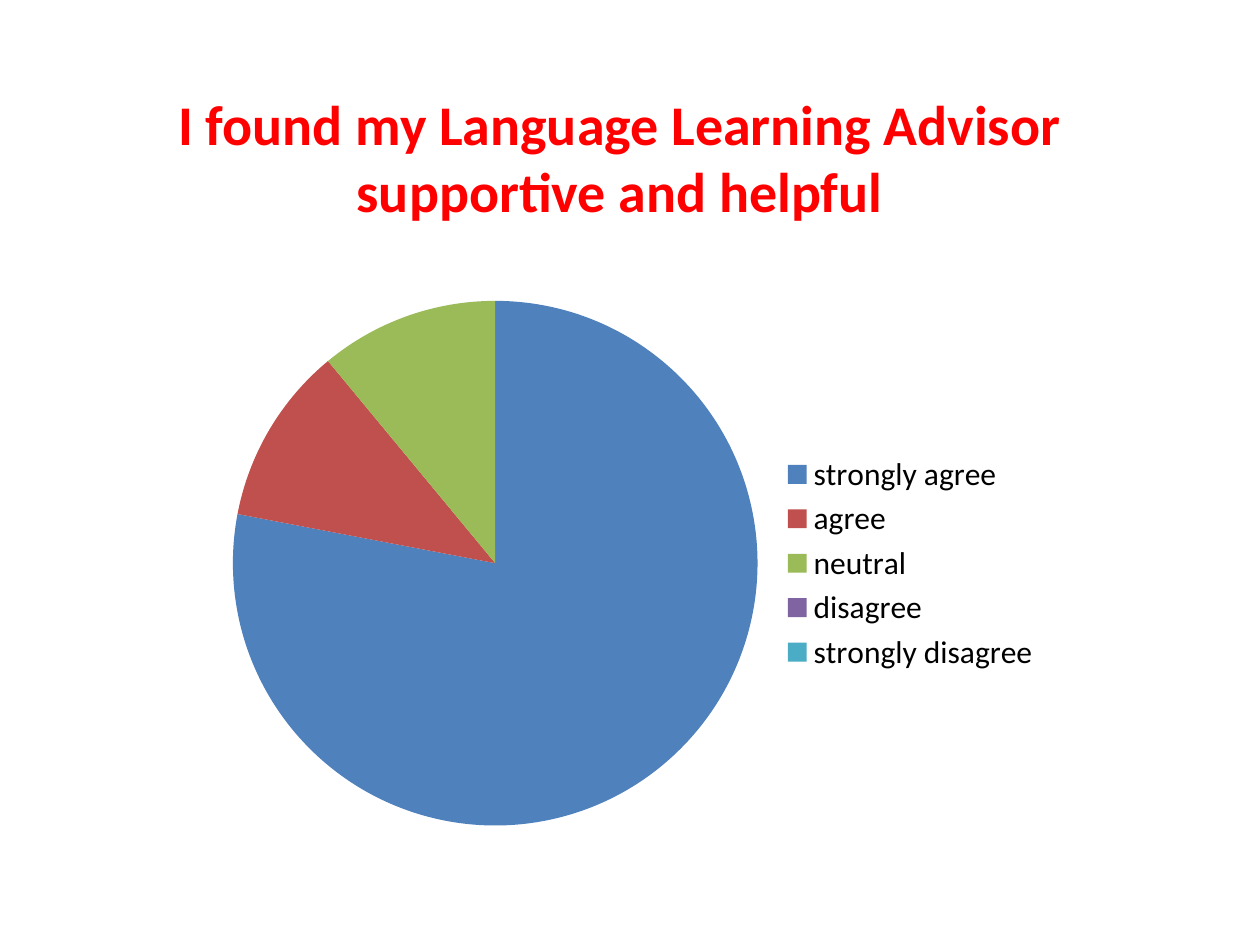
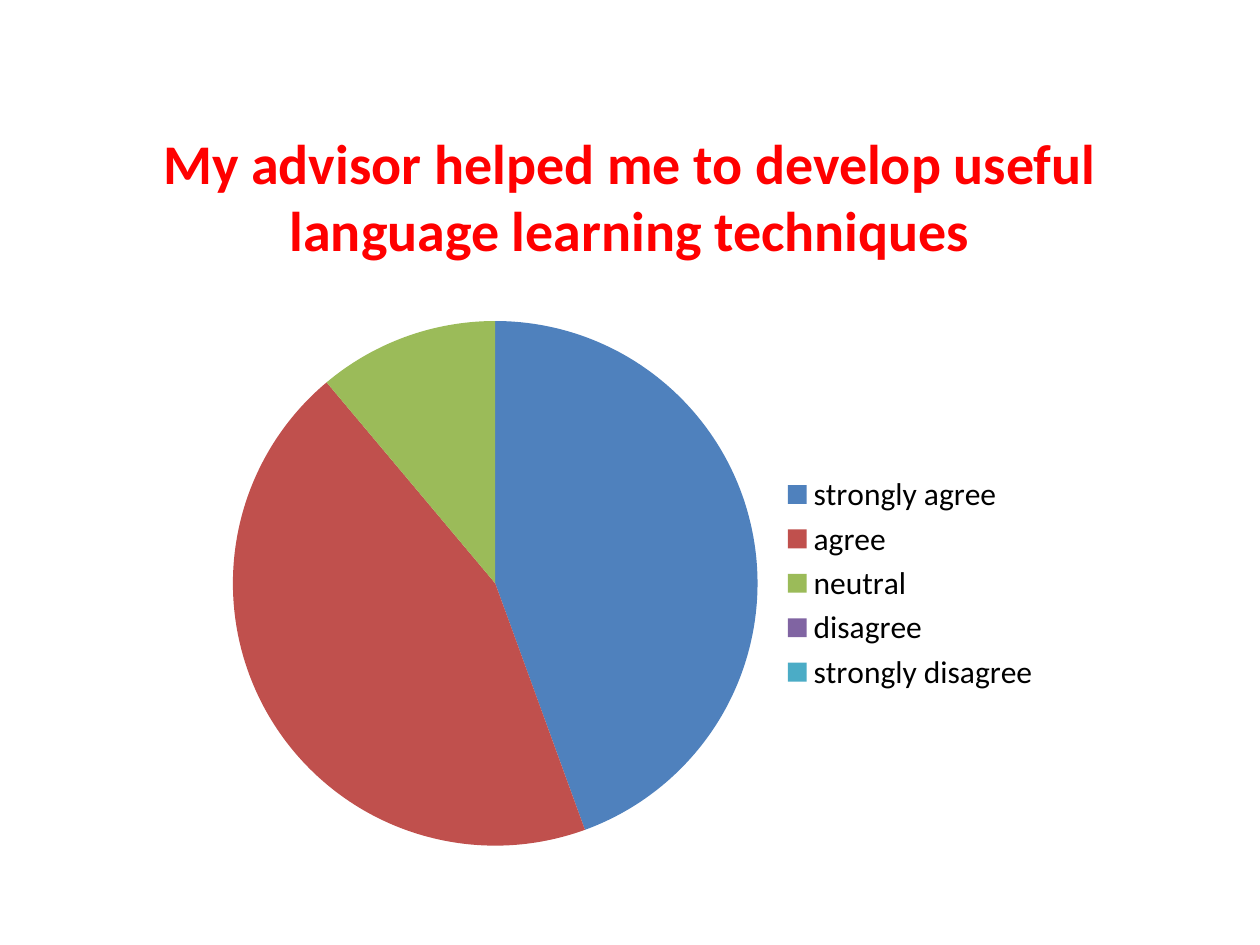
"""Build two survey slides, each with a title and a pie chart of answers."""
from pptx import Presentation
from pptx.chart.data import CategoryChartData
from pptx.dml.color import RGBColor
from pptx.enum import chart as charts, text
from pptx.util import Inches, Pt

FONT = "Calibri"
COLORS = {"title": "FF0000", "legend": "000000", "background": "FFFFFF"}
ANSWERS = {
    "strongly agree": "4F81BD",
    "agree": "C0504D",
    "neutral": "9BBB59",
    "disagree": "8064A2",
    "strongly disagree": "4BACC6",
}
QUESTIONS = [
    {
        "title": "I found my Language Learning Advisor supportive and helpful",
        "title_box": (0.67, 0.44, 8.5, 1.61),
        "chart_top": 2.25,
        "percents": (78, 11, 11, 0, 0),
    },
    {
        "title": "My advisor helped me to develop useful language learning techniques",
        "title_box": (0.75, 0.84, 8.5, 1.42),
        "chart_top": 2.41,
        "percents": (44, 44, 11, 0, 0),
    },
]
CHART_LEFT, CHART_WIDTH, CHART_HEIGHT = 1.69, 6.67, 4.44


def format_font(font, size, color, bold=False):
    font.name = FONT
    font.size = Pt(size)
    font.bold = bold
    font.color.rgb = RGBColor.from_string(color)


def write_title(box, words, place, size=32, color=COLORS["title"], bold=True):
    box.left, box.top, box.width, box.height = map(Inches, place)
    frame = box.text_frame
    frame.word_wrap = True
    frame.auto_size = text.MSO_AUTO_SIZE.NONE
    frame.vertical_anchor = text.MSO_ANCHOR.MIDDLE
    para = frame.paragraphs[0]
    para.alignment = text.PP_ALIGN.CENTER
    span = para.add_run()
    span.text = words
    format_font(span.font, size, color, bold)


def add_pie(page, percents, top):
    data = CategoryChartData()
    data.categories = list(ANSWERS)
    data.add_series("Series 1", percents)
    place = map(Inches, (CHART_LEFT, top, CHART_WIDTH, CHART_HEIGHT))
    chart = page.shapes.add_chart(charts.XL_CHART_TYPE.PIE, *place, data).chart
    chart.has_title = False
    format_font(chart.font, 18, COLORS["legend"])
    chart.has_legend = True
    chart.legend.position = charts.XL_LEGEND_POSITION.RIGHT
    chart.legend.include_in_layout = False
    plot = chart.plots[0]
    plot.vary_by_categories = True
    for index, color in enumerate(ANSWERS.values()):
        fill = plot.series[0].points[index].format.fill
        fill.solid()
        fill.fore_color.rgb = RGBColor.from_string(color)


def main():
    deck = Presentation()
    deck.slide_width, deck.slide_height = Inches(10), Inches(7.5)
    background = deck.slide_master.background.fill
    background.solid()
    background.fore_color.rgb = RGBColor.from_string(COLORS["background"])
    title_only = deck.slide_layouts.get_by_name("Title Only")
    for question in QUESTIONS:
        page = deck.slides.add_slide(title_only)
        write_title(page.shapes.title, question["title"], question["title_box"])
        add_pie(page, question["percents"], question["chart_top"])
    deck.save("out.pptx")


if __name__ == "__main__":
    main()
